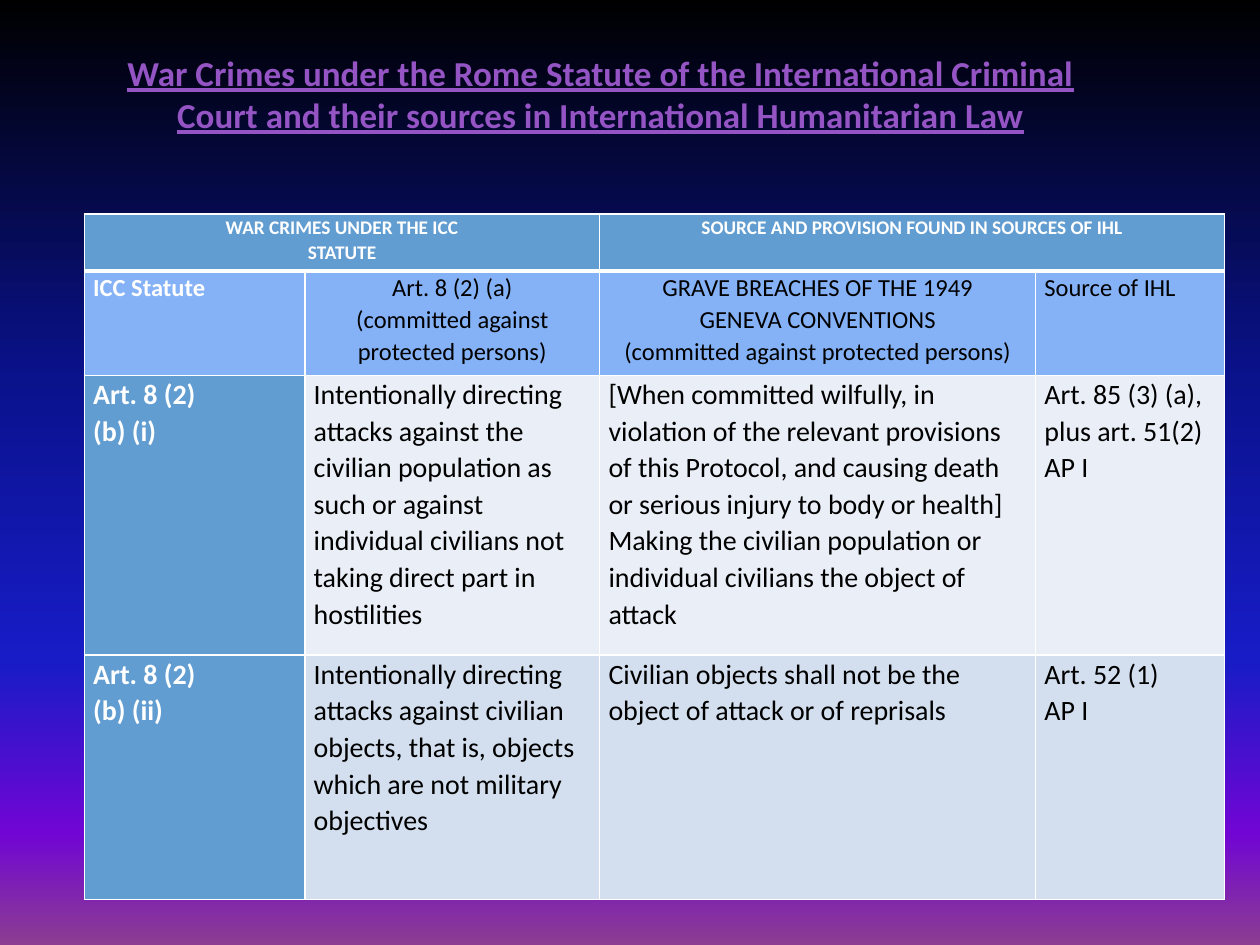
from dataclasses import dataclass

from lxml.etree import SubElement
from pptx import Presentation
from pptx.dml.color import RGBColor
from pptx.enum.text import PP_ALIGN
from pptx.oxml import parse_xml
from pptx.oxml.ns import nsdecls, qn
from pptx.util import Inches, Pt


@dataclass(frozen=True)
class Theme:
    font: str = "Calibri"
    title: str = "9454C3"
    white: str = "FFFFFF"
    black: str = "000000"
    header: str = "629DD1"
    subheader: str = "85B2F6"
    light_row: str = "EAEFF7"
    dark_row: str = "D3DFEE"
    title_size: int = 20
    header_size: int = 11
    subheader_size: int = 14
    body_size: int = 16
    line_spacing: float = 1.07
    border: int = 1
    heavy_border: int = 3
    background: tuple = (
        (0, "000000"), (40, "0A128C"), (70, "181CC7"), (88, "7005D4"), (100, "8C3D91"),
    )


@dataclass(frozen=True)
class RowStyle:
    height: float
    size: int
    fill: str
    first_fill: str
    color: str
    bold: bool = False
    centered: tuple = ()
    top: int = 1
    bottom: int = 1


class SlideBuilder:
    def __init__(self, page, theme):
        self.page = page
        self.theme = theme

    def background(self):
        fill = self.page.background.fill
        fill.gradient()
        fill.gradient_angle = 270
        stops = self.page.element.find(".//" + qn("a:gsLst"))
        for stop in list(stops):
            stops.remove(stop)
        for position, color in self.theme.background:
            stop = SubElement(stops, qn("a:gs"), pos=str(position * 1000))
            SubElement(stop, qn("a:srgbClr"), val=color)

    def style_text(self, frame, size, color, bold, align, underline=None):
        for para in frame.paragraphs:
            para.alignment = align
            for span in para.runs:
                font = span.font
                font.name = self.theme.font
                font.size = Pt(size)
                font.bold = bold
                font.underline = underline
                font.color.rgb = RGBColor.from_string(color)

    def title(self, text, left, top, width, height):
        box = self.page.shapes.add_textbox(
            Inches(left), Inches(top), Inches(width), Inches(height))
        frame = box.text_frame
        frame.word_wrap = True
        frame.text = text
        self.style_text(frame, self.theme.title_size, self.theme.title,
                        True, PP_ALIGN.CENTER, True)

    def borders(self, cell, top, bottom):
        properties = cell._tc.get_or_add_tcPr()
        thin = self.theme.border
        sides = (("lnL", thin), ("lnR", thin), ("lnT", top), ("lnB", bottom))
        for index, (side, width) in enumerate(sides):
            properties.insert(index, parse_xml(
                f'<a:{side} {nsdecls("a")} w="{Pt(width)}"><a:solidFill>'
                f'<a:srgbClr val="{self.theme.white}"/></a:solidFill></a:{side}>'))

    def cell(self, cell, text, style, column):
        first = column == 0
        cell.margin_left = cell.margin_right = Inches(0.07)
        cell.margin_top = cell.margin_bottom = 0
        cell.fill.solid()
        cell.fill.fore_color.rgb = RGBColor.from_string(
            style.first_fill if first else style.fill)
        self.borders(cell, style.top, style.bottom)
        cell.text_frame.text = text
        for para in cell.text_frame.paragraphs:
            para.line_spacing = self.theme.line_spacing
        self.style_text(cell.text_frame, style.size,
                        self.theme.white if first else style.color,
                        first or style.bold,
                        PP_ALIGN.CENTER if column in style.centered else PP_ALIGN.LEFT)

    def table(self, left, top, widths, rows, merges):
        height = sum(style.height for style, _ in rows)
        table = self.page.shapes.add_table(
            len(rows), len(widths), Inches(left), Inches(top),
            Inches(sum(widths)), Inches(height)).table
        for column, width in zip(table.columns, widths):
            column.width = Inches(width)
        for row, (style, texts) in enumerate(rows):
            table.rows[row].height = Inches(style.height)
            for column, text in enumerate(texts):
                self.cell(table.cell(row, column), text, style, column)
        for row, start, end in merges:
            table.cell(row, start).merge(table.cell(row, end))


def main():
    theme = Theme()
    deck = Presentation()
    deck.slide_width, deck.slide_height = Inches(10), Inches(7.5)
    builder = SlideBuilder(deck.slides.add_slide(deck.slide_layouts[6]), theme)
    builder.background()
    builder.title(
        "War Crimes under the Rome Statute of the International Criminal Court "
        "and their sources in International Humanitarian Law",
        0.67, 0.36, 8.19, 1.08)

    header = RowStyle(0.45, theme.header_size, theme.header, theme.header, theme.white,
                      bold=True, centered=(0, 2), bottom=theme.heavy_border)
    subheader = RowStyle(0.83, theme.subheader_size, theme.subheader, theme.subheader,
                         theme.black, centered=(1, 2), top=theme.heavy_border)
    light = RowStyle(2.22, theme.body_size, theme.light_row, theme.header, theme.black)
    dark = RowStyle(1.94, theme.body_size, theme.dark_row, theme.header, theme.black)
    rows = [
        (header, ["WAR CRIMES UNDER THE ICC\nSTATUTE", "",
                  "SOURCE AND PROVISION FOUND IN SOURCES OF IHL", ""]),
        (subheader, ["ICC Statute",
                     "Art. 8 (2) (a)\n(committed against\nprotected persons)",
                     "GRAVE BREACHES OF THE 1949\nGENEVA CONVENTIONS\n"
                     "(committed against protected persons)",
                     "Source of IHL"]),
        (light, ["Art. 8 (2) \v(b) (i)",
                 "Intentionally directing attacks against the civilian population as "
                 "such or against individual civilians not taking direct part in "
                 "hostilities",
                 "[When committed wilfully, in violation of the relevant provisions of "
                 "this Protocol, and causing death or serious injury to body or health] "
                 "Making the civilian population or individual civilians the object of "
                 "attack",
                 "Art. 85 (3) (a),\vplus art. 51(2)\vAP I"]),
        (dark, ["Art. 8 (2)\v(b) (ii)",
                "Intentionally directing attacks against civilian objects, that is, "
                "objects which are not military objectives",
                "Civilian objects shall not be the object of attack or of reprisals",
                "Art. 52 (1)\vAP I"]),
    ]
    builder.table(0.67, 1.7, [1.75, 2.34, 3.46, 1.5], rows, [(0, 0, 1), (0, 2, 3)])
    deck.save("out.pptx")


if __name__ == "__main__":
    main()
